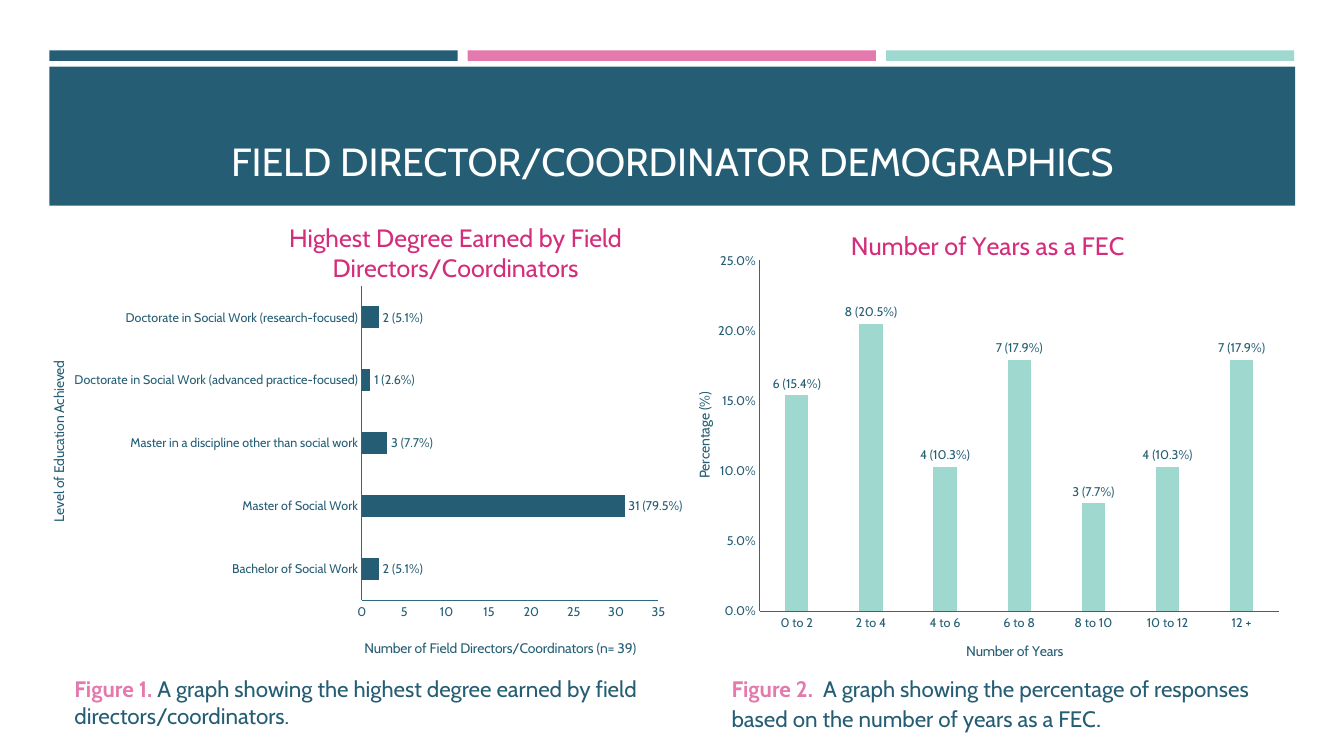
"""Build the field director and coordinator demographics slide."""
import dataclasses
import typing

import pptx
import pptx.chart.chart
import pptx.chart.data
import pptx.dml.color
import pptx.enum.chart
import pptx.enum.shapes
import pptx.enum.text
import pptx.oxml
import pptx.oxml.ns
import pptx.slide
import pptx.text.text
import pptx.util

RGBColor = pptx.dml.color.RGBColor
TEAL = RGBColor(0x25, 0x5E, 0x74)
AXIS_TEAL = RGBColor(0x2A, 0x6A, 0x83)
PINK = RGBColor(0xE3, 0x79, 0xAC)
MAGENTA = RGBColor(0xD3, 0x2D, 0x7C)
MINT = RGBColor(0x9E, 0xD8, 0xCF)
WHITE = RGBColor(0xFF, 0xFF, 0xFF)
FONT = "Cabin"
COLUMNS, ROWS = 160, 90
CELL = pptx.util.Inches(7.5) // ROWS


class Box(typing.NamedTuple):
    """Left, top, width and height in grid cells."""
    left: float
    top: float
    width: float
    height: float

    def lengths(self) -> list[int]:
        return [round(value * CELL) for value in self]


class Run(typing.NamedTuple):
    """A piece of text with one look."""
    text: str
    size: float
    color: RGBColor
    bold: bool = False


class Heading(typing.NamedTuple):
    """Lines of a chart or axis title, and its place as shares of the chart."""
    lines: tuple[str, ...]
    left: float
    top: float


@dataclasses.dataclass(frozen=True)
class BarPanel:
    """One bar chart with its headings, scale and bars."""
    kind: pptx.enum.chart.XL_CHART_TYPE
    box: Box
    plot: tuple[float, float, float, float]
    title: Heading
    category_title: Heading
    value_title: Heading
    bars: tuple[tuple[str, float, str], ...]
    color: RGBColor
    gap: int
    overlap: int
    maximum: float
    step: float
    number_format: str


PANELS = (
    BarPanel(
        pptx.enum.chart.XL_CHART_TYPE.BAR_CLUSTERED,
        Box(5.52, 24.96, 75.72, 53.76), (0.5, 0.17, 0.47, 0.7),
        Heading(("Highest Degree Earned by Field", "Directors/Coordinators"), 0.38, 0.02),
        Heading(("Level of Education Achieved",), 0, 0.33),
        Heading(("Number of Field Directors/Coordinators (n= 39)",), 0.5, 0.95),
        (("Bachelor of Social Work", 2, "2 (5.1%)"),
         ("Master of Social Work", 31, "31 (79.5%)"),
         ("Master in a discipline other than social work", 3, "3 (7.7%)"),
         ("Doctorate in Social Work (advanced practice-focused)", 1, "1 (2.6%)"),
         ("Doctorate in Social Work (research-focused)", 2, "2 (5.1%)")),
        TEAL, 182, 0, 35, 5, "General"),
    BarPanel(
        pptx.enum.chart.XL_CHART_TYPE.COLUMN_CLUSTERED,
        Box(80.88, 24.96, 73.56, 54.96), (0.13, 0.11, 0.84, 0.76),
        Heading(("Number of Years as a FEC",), 0.27, 0.03),
        Heading(("Number of Years",), 0.46, 0.93),
        Heading(("Percentage (%)",), 0.02, 0.39),
        (("0 to 2", 0.154, "6 (15.4%)"), ("2 to 4", 0.205, "8 (20.5%)"),
         ("4 to 6", 0.103, "4 (10.3%)"), ("6 to 8", 0.179, "7 (17.9%)"),
         ("8 to 10", 0.077, "3 (7.7%)"), ("10 to 12", 0.103, "4 (10.3%)"),
         ("12 +", 0.179, "7 (17.9%)")),
        MINT, 219, -27, 0.25, 0.05, "0.0%"),
)

CAPTIONS = (
    (Box(7.68, 79.8, 75.84, 7.68),
     (Run("Figure 1. ", 16, PINK, True),
      Run("A graph showing the highest degree earned by field directors/coordinators.", 16, TEAL))),
    (Box(85.92, 79.8, 68.76, 8.04),
     (Run("Figure 2.  ", 16, PINK, True),
      Run("A graph showing the percentage of responses based on the number of years as a FEC", 16, TEAL),
      Run(".", 18, TEAL))),
)


def add_run(paragraph: pptx.text.text._Paragraph, piece: Run) -> None:
    """Append one formatted run."""
    run = paragraph.add_run()
    run.text = piece.text
    style_font(run.font, piece.size, piece.color, piece.bold)


def style_font(font: pptx.text.text.Font, size: float, color: RGBColor, bold: bool = False) -> None:
    """Set face, size, weight and colour."""
    font.name, font.size, font.bold = FONT, pptx.util.Pt(size), bold
    font.color.rgb = color


def add_bar(slide: pptx.slide.Slide, box: Box, color: RGBColor) -> None:
    """Draw one flat rectangle."""
    shape = slide.shapes.add_shape(pptx.enum.shapes.MSO_SHAPE.RECTANGLE, *box.lengths())
    shape.shadow.inherit = False
    shape.fill.solid()
    shape.fill.fore_color.rgb = color
    shape.line.fill.background()


def place(parent, shares: typing.Sequence[float], inner: bool = False) -> None:
    """Give a chart part a fixed place as shares of the chart."""
    namespace = pptx.oxml.ns.nsdecls("c")
    entries = '<c:layoutTarget val="inner"/>' if inner else ""
    names = ("x", "y", "w", "h")[:len(shares)]
    entries += "".join(f'<c:{name}Mode val="edge"/>' for name in names[:2])
    entries += "".join(f'<c:{name} val="{share}"/>' for name, share in zip(names, shares))
    layout = pptx.oxml.parse_xml(
        f"<c:layout {namespace}><c:manualLayout>{entries}</c:manualLayout></c:layout>")
    present = parent.find(pptx.oxml.ns.qn("c:layout"))
    if present is None:
        parent.insert(0, layout)
    else:
        parent.replace(present, layout)


def write_heading(title, heading: Heading, size: float, color: RGBColor) -> None:
    """Fill and place a chart title or an axis title."""
    frame = title.text_frame
    for index, line in enumerate(heading.lines):
        paragraph = frame.add_paragraph() if index else frame.paragraphs[0]
        add_run(paragraph, Run(line, size, color))
    place(title._element, (heading.left, heading.top))


def style_axis(axis, heading: Heading) -> None:
    """Format an axis with its line, labels and title."""
    axis.has_major_gridlines = False
    axis.major_tick_mark = axis.minor_tick_mark = pptx.enum.chart.XL_TICK_MARK.NONE
    axis.format.line.color.rgb = AXIS_TEAL
    axis.format.line.width = pptx.util.Pt(0.75)
    style_font(axis.tick_labels.font, 9, TEAL)
    write_heading(axis.axis_title, heading, 10, TEAL)


def add_panel(slide: pptx.slide.Slide, panel: BarPanel) -> None:
    """Draw one bar chart with a written label on every bar."""
    data = pptx.chart.data.CategoryChartData(number_format=panel.number_format)
    data.categories = [name for name, _, _ in panel.bars]
    data.add_series("Series 1", [value for _, value, _ in panel.bars])
    chart = slide.shapes.add_chart(panel.kind, *panel.box.lengths(), data).chart
    chart.has_legend = False
    style_font(chart.font, 10, TEAL)
    chart.has_title = True
    write_heading(chart.chart_title, panel.title, 18, MAGENTA)
    style_axis(chart.category_axis, panel.category_title)
    style_axis(chart.value_axis, panel.value_title)
    axis = chart.value_axis
    axis.minimum_scale, axis.maximum_scale, axis.major_unit = 0, panel.maximum, panel.step
    axis.tick_labels.number_format = panel.number_format
    axis.tick_labels.number_format_is_linked = False
    plot = chart.plots[0]
    plot.vary_by_categories = False
    plot.gap_width, plot.overlap = panel.gap, panel.overlap
    series = plot.series[0]
    series.format.fill.solid()
    series.format.fill.fore_color.rgb = panel.color
    for index, (_, _, text) in enumerate(panel.bars):
        label = series.points[index].data_label
        add_run(label.text_frame.paragraphs[0], Run(text, 9, TEAL))
        label.position = pptx.enum.chart.XL_LABEL_POSITION.OUTSIDE_END
    place(chart._chartSpace.chart.plotArea, panel.plot, inner=True)


def add_caption(slide: pptx.slide.Slide, box: Box, pieces: tuple[Run, ...]) -> None:
    """Write a figure caption."""
    frame = slide.shapes.add_textbox(*box.lengths()).text_frame
    frame.word_wrap = True
    for piece in pieces:
        add_run(frame.paragraphs[0], piece)


def main() -> None:
    """Build and save the slide."""
    presentation = pptx.Presentation()
    presentation.slide_width, presentation.slide_height = COLUMNS * CELL, ROWS * CELL
    slide = presentation.slides.add_slide(presentation.slide_layouts[5])
    for index, color in enumerate((TEAL, PINK, MINT)):
        add_bar(slide, Box(5.88 + 49.8 * index, 6, 48.6, 1.25), color)
    add_bar(slide, Box(5.88, 7.92, 148.32, 16.56), TEAL)
    title = slide.shapes.title
    slide.shapes._spTree.append(title._element)
    title.left, title.top, title.width, title.height = Box(7.68, 9.6, 144.72, 12.96).lengths()
    title.text_frame.vertical_anchor = pptx.enum.text.MSO_ANCHOR.BOTTOM
    paragraph = title.text_frame.paragraphs[0]
    paragraph.alignment = pptx.enum.text.PP_ALIGN.CENTER
    add_run(paragraph, Run("FIELD DIRECTOR/COORDINATOR DEMOGRAPHICS", 28, WHITE))
    for box, pieces in CAPTIONS:
        add_caption(slide, box, pieces)
    for panel in PANELS:
        add_panel(slide, panel)
    presentation.save("out.pptx")


if __name__ == "__main__":
    main()
